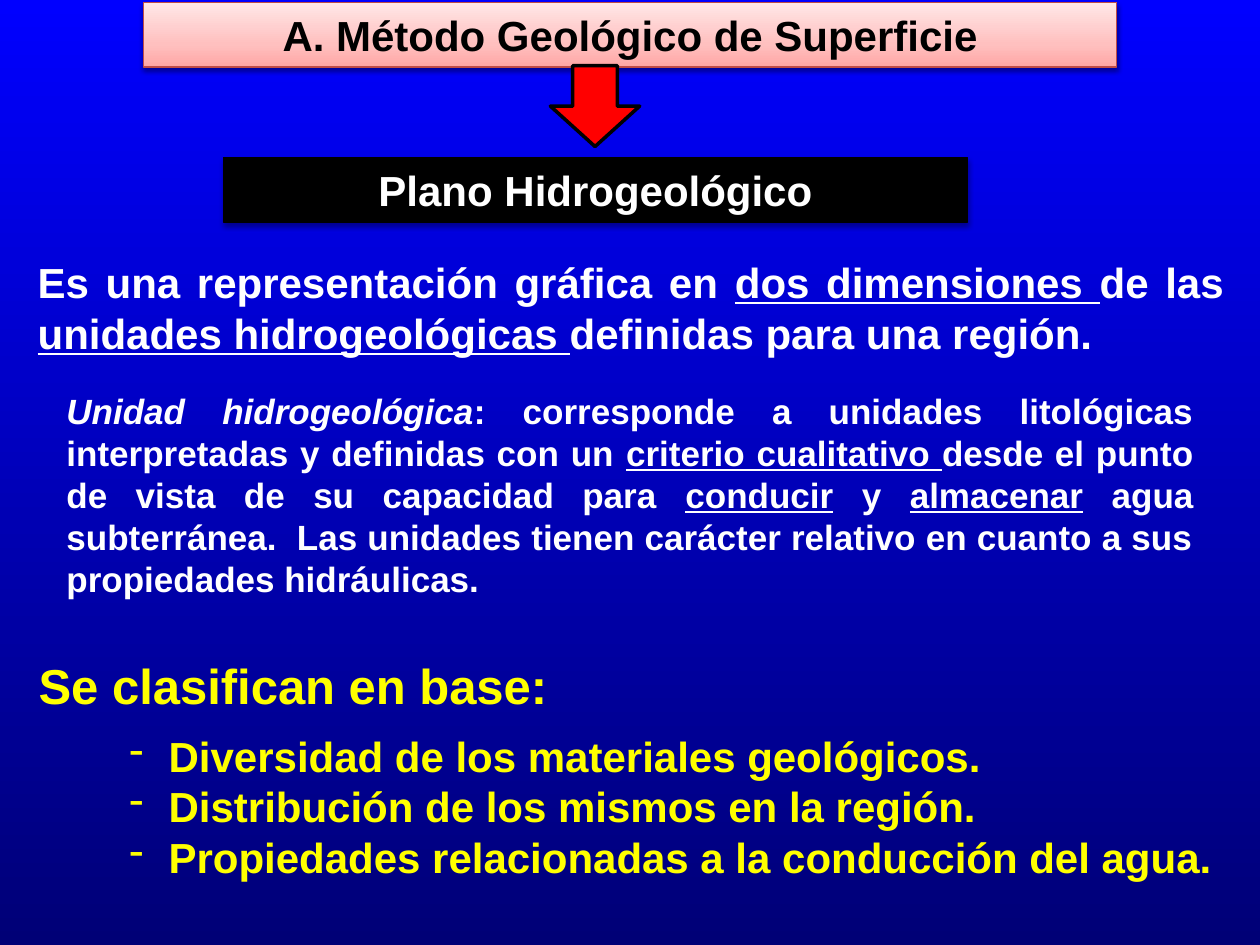
import copy

import pptx
import pptx.dml.color
import pptx.enum.shapes
import pptx.enum.text
import pptx.oxml
import pptx.oxml.ns
import pptx.util

Cm = pptx.util.Cm
Pt = pptx.util.Pt
ALIGN = pptx.enum.text.PP_ALIGN
SHAPE = pptx.enum.shapes.MSO_SHAPE

COLORS = {
    "blue": "0000FF", "navy": "000076", "rose": "FFA6A5", "pink": "FFC0BF",
    "blush": "FFE7E7", "brick": "BF4C48", "black": "000000",
    "white": "FFFFFF", "red": "FF0000", "yellow": "FFFF00",
}
UNDERLINED = {"underline": True}
ITALIC = {"italic": True}


def rgb(name):
    return pptx.dml.color.RGBColor.from_string(COLORS[name])


def set_all(obj, values):
    for key, value in values.items():
        setattr(obj, key, value)


def xml(body):
    return pptx.oxml.parse_xml(body.replace(">", f" {pptx.oxml.ns.nsdecls('a')}>", 1))


class SlideBuilder:
    font = {"name": "Arial", "bold": True}

    def __init__(self, slide):
        self.slide = slide

    def gradient(self, fill, stops, angle):
        fill.gradient()
        fill.gradient_angle = angle
        first = fill._fill._gradFill.gsLst[0]
        for _ in stops[2:]:
            first.addnext(copy.deepcopy(first))
        for stop, (position, color) in zip(fill.gradient_stops, stops):
            stop.position = position
            stop.color.rgb = rgb(color)

    def background(self, stops, angle):
        self.gradient(self.slide.background.fill, stops, angle)

    def shape(self, kind, box, fill, line, width):
        s = self.slide.shapes.add_shape(kind, *map(Cm, box))
        s.shadow.inherit = False
        if isinstance(fill, str):
            s.fill.solid()
            s.fill.fore_color.rgb = rgb(fill)
        else:
            self.gradient(s.fill, fill, 90)
        s.line.color.rgb = rgb(line)
        s.line.width = Pt(width)
        return s

    def banner(self, box, text, fill, line, color, alpha, distance):
        s = self.shape(SHAPE.RECTANGLE, box, fill, line, 0.75)
        effects = s._element.spPr.find(pptx.oxml.ns.qn("a:effectLst"))
        effects.append(xml(
            f'<a:outerShdw blurRad="{Pt(3.1)}" dist="{Pt(distance)}" dir="5400000" rotWithShape="0">'
            f'<a:srgbClr val="{COLORS["black"]}"><a:alpha val="{alpha * 1000}"/></a:srgbClr>'
            '</a:outerShdw>'))
        self.fill_text(s.text_frame, [[(text, {})]], 24, color, ALIGN.CENTER)

    def arrow(self, box, fill, line):
        s = self.shape(SHAPE.RIGHT_ARROW, box, fill, line, 2)
        s.rotation = 90

    def text(self, box, paragraphs, size, color, align=ALIGN.LEFT, wrap=True, bullet=None):
        s = self.slide.shapes.add_textbox(*map(Cm, box))
        self.fill_text(s.text_frame, paragraphs, size, color, align, wrap, bullet)

    def fill_text(self, tf, paragraphs, size, color, align, wrap=True, bullet=None):
        set_all(tf, {"word_wrap": wrap, "auto_size": pptx.enum.text.MSO_AUTO_SIZE.SHAPE_TO_FIT_TEXT})
        for i, runs in enumerate(paragraphs):
            p = tf.add_paragraph() if i else tf.paragraphs[0]
            p.alignment = align
            if bullet:
                pPr = p._p.get_or_add_pPr()
                pPr.set("marL", str(Cm(0.79)))
                pPr.set("indent", str(-Cm(0.79)))
                pPr.append(xml("<a:buFontTx></a:buFontTx>"))
                pPr.append(xml(f'<a:buChar char="{bullet}"></a:buChar>'))
            for text, style in runs:
                r = p.add_run()
                r.text = text
                set_all(r.font, {**self.font, "size": Pt(size), **style})
                r.font.color.rgb = rgb(color)


def main():
    prs = pptx.Presentation()
    set_all(prs, {"slide_width": Cm(25.4), "slide_height": Cm(19.05)})
    b = SlideBuilder(prs.slides.add_slide(prs.slide_layouts[6]))
    b.background([(0, "blue"), (1, "navy")], 270)

    b.banner((2.9, 0.05, 19.61, 1.3), "A. Método Geológico de Superficie",
             [(0, "rose"), (0.35, "pink"), (1, "blush")], "brick", "black", 38, 1.6)
    b.banner((4.5, 3.18, 15.01, 1.3), "Plano Hidrogeológico",
             "black", "black", "white", 35, 1.8)
    b.arrow((11.18, 1.24, 1.63, 1.8), "red", "black")

    b.text((0.51, 5.05, 24.41, 2.31), [[
        ("Es una representación gráfica en ", {}),
        ("dos dimensiones ", UNDERLINED),
        ("de las ", {}),
        ("unidades hidrogeológicas ", UNDERLINED),
        ("definidas para una región.", {}),
    ]], 24, "white", ALIGN.JUSTIFY)
    b.text((1.09, 7.72, 23.22, 4.52), [[
        ("Unidad hidrogeológica", ITALIC),
        (": corresponde a unidades litológicas interpretadas y definidas con un ", {}),
        ("criterio cualitativo ", UNDERLINED),
        ("desde el punto de vista de su capacidad para ", {}),
        ("conducir", UNDERLINED),
        (" y ", {}),
        ("almacenar", UNDERLINED),
        (" agua subterránea.  Las unidades tienen carácter relativo en cuanto a sus "
         "propiedades hidráulicas.", {}),
    ]], 20, "white", ALIGN.JUSTIFY)

    b.text((0.53, 13.08, 10.9, 1.45), [[("Se clasifican en base:", {})]], 28, "yellow", wrap=False)
    criteria = [
        "Diversidad de los materiales geológicos.",
        "Distribución de los mismos en la región.",
        "Propiedades relacionadas a la conducción del agua.",
    ]
    b.text((2.36, 14.6, 22.53, 3.33), [[(c, {})] for c in criteria], 24, "yellow",
           wrap=False, bullet="-")
    prs.save("out.pptx")


if __name__ == "__main__":
    main()
